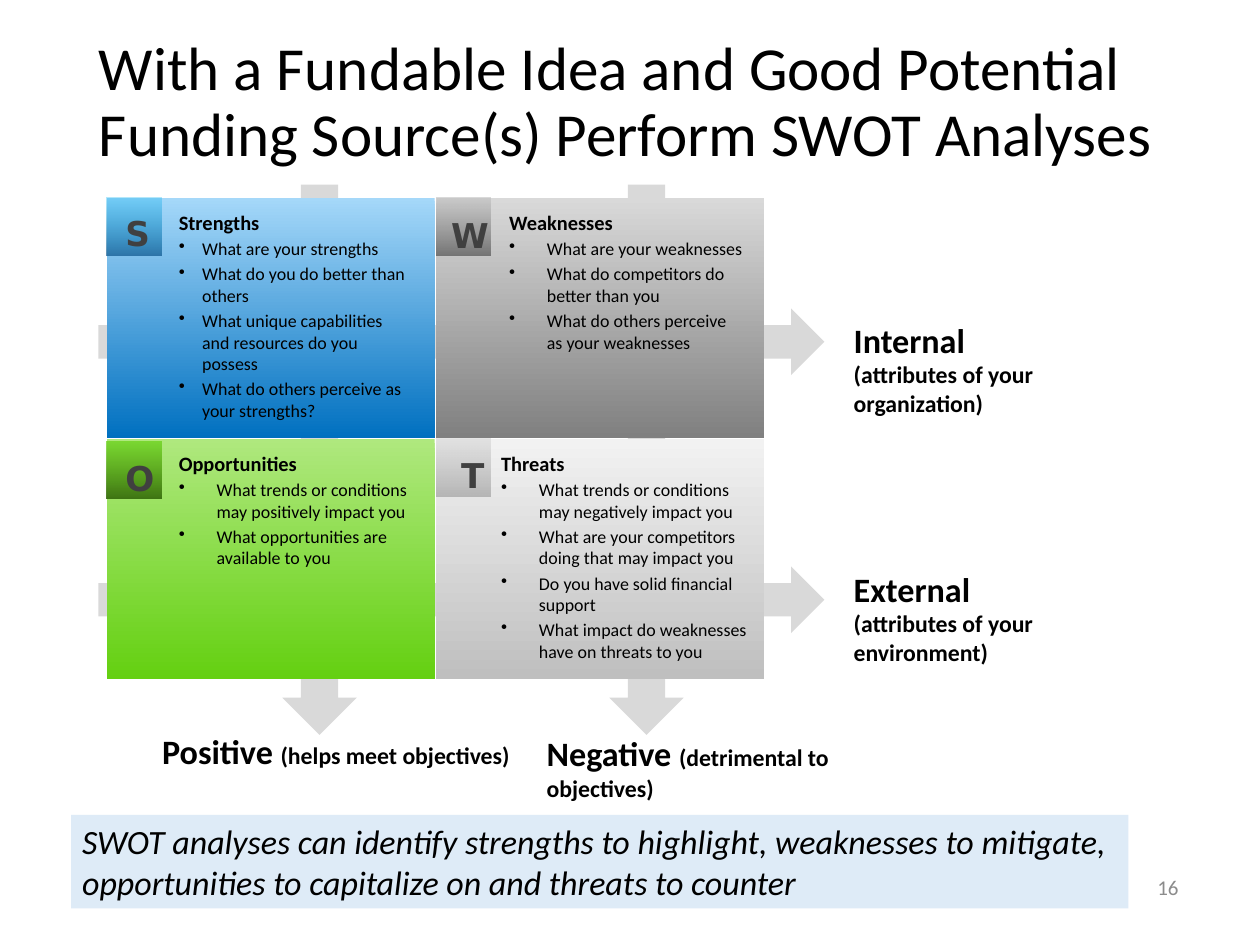
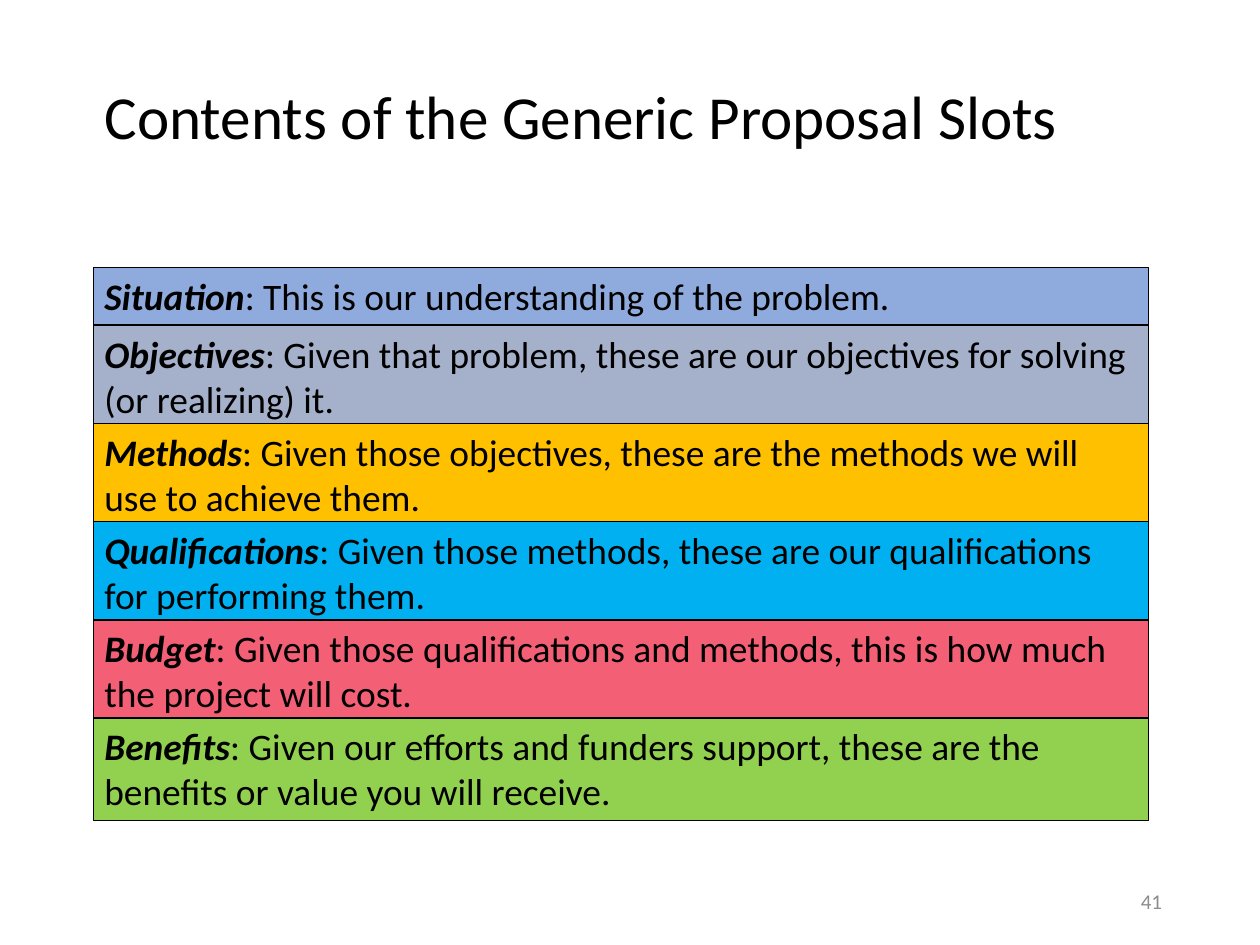
from lxml.etree import SubElement
from pptx import Presentation
from pptx.dml.color import RGBColor
from pptx.enum.shapes import MSO_SHAPE
from pptx.enum.text import MSO_ANCHOR, MSO_AUTO_SIZE, PP_ALIGN
from pptx.oxml.ns import qn
from pptx.util import Pt

FONT, MONO = "Calibri", "DejaVu Sans"
BLACK, GREY, DARK = "000000", "8C8C8C", "404040"
ARROW, BAND = "D9D9D9", "DEEBF7"

QUAD_W, QUAD_H = 212.4, 155.5
LEFT, TOP, STEP_X, STEP_Y = 69.1, 128.2, 213.5, 156.1

# column, row, gradient, badge gradient with opacities, badge drop,
# letter, letter offset, text offset, text width, indent, heading, points
QUADS = [
    (0, 0, ("A5D8F9", "0070C0"), (("00B0F0", 30), ("004C84", 65)), 0,
     "S", (5, 5.8), 39.6, 166.3, 15.1, "Strengths",
     ["What are your strengths",
      "What do you do better than others",
      "What unique capabilities and resources do you possess",
      "What do others perceive as your strengths?"]),
    (1, 0, ("D9D9D9", "808080"), (("BFBFBF", 58), ("595959", 74)), 0,
     "W", (2.5, 7.2), 40, 166.3, 24.5, "Weaknesses",
     ["What are your weaknesses",
      "What do competitors do better than you",
      "What do others perceive as your weaknesses"]),
    (0, 1, ("AFE87E", "64D011"), (("64D011", 70), ("326609", 88)), 1.4,
     "O", (5, 8.6), 39.6, 166.3, 24.5, "Opportunities",
     ["What trends or conditions may positively impact you",
      "What opportunities are available to you"]),
    (1, 1, ("F2F2F2", "BFBFBF"), (("D9D9D9", 66), ("A6A6A6", 75)), 0,
     "T", (9, 6.5), 34.9, 177.1, 24.5, "Threats",
     ["What trends or conditions may negatively impact you",
      "What are your competitors doing that may impact you",
      "Do you have solid financial support",
      "What impact do weaknesses have on threats to you"]),
]

LABELS = [
    (97.9, 469.4, 244.1, "Positive ", "(helps meet objectives)"),
    (545.8, 203, 140.4, "Internal ", "(attributes of your organization)"),
    (545.8, 364.3, 141.8, "External ", "(attributes of your environment)"),
    (347, 470.9, 269.3, "Negative ", "(detrimental to objectives)"),
]

SLOTS = [
    ("8FAADC", "Situation", ": This is our understanding of the problem."),
    ("A5B1CB", "Objectives", ": Given that problem, these are our objectives "
     "for solving (or realizing) it."),
    ("FFC000", "Methods", ": Given those objectives, these are the methods "
     "we will use to achieve them."),
    ("00B0F0", "Qualifications", ": Given those methods, these are our "
     "qualifications for performing them."),
    ("F35F74", "Budget", ": Given those qualifications and methods, this is "
     "how much the project will cost."),
    ("92D050", "Benefits", ": Given our efforts and funders support, these "
     "are the benefits or value you will receive."),
]


def rgb(code):
    return RGBColor.from_string(code)


def box(x, y, w, h):
    return Pt(x), Pt(y), Pt(w), Pt(h)


def add_run(para, text, size, bold=False, slant=False, hue=BLACK, face=FONT):
    run = para.add_run()
    run.text = text
    font = run.font
    font.name, font.size = face, Pt(size)
    font.bold, font.italic = bold, slant
    font.color.rgb = rgb(hue)


def add_text(slide, x, y, w, h):
    """Add a wrapping text box and return its frame."""
    frame = slide.shapes.add_textbox(*box(x, y, w, h)).text_frame
    frame.word_wrap = True
    return frame


def add_form(slide, kind, x, y, w, h, fill=None, line=None):
    """Add a flat preset shape whose text starts at the top left."""
    form = slide.shapes.add_shape(kind, *box(x, y, w, h))
    form.shadow.inherit = False
    if fill:
        form.fill.solid()
        form.fill.fore_color.rgb = rgb(fill)
    if line:
        form.line.color.rgb = rgb(line)
        form.line.width = Pt(0.75)
    else:
        form.line.fill.background()
    form.text_frame.vertical_anchor = MSO_ANCHOR.TOP
    form.text_frame.paragraphs[0].alignment = PP_ALIGN.LEFT
    return form


def shade(form, stops):
    """Fill from top to bottom with two (colour, opacity percent) stops."""
    form.fill.gradient()
    form.fill.gradient_angle = 270
    for stop, (hue, _) in zip(form.fill.gradient_stops, stops):
        stop.color.rgb = rgb(hue)
    marks = form.fill._xPr.iter(qn("a:srgbClr"))
    for mark, (_, opaque) in zip(list(marks), stops):
        if opaque < 100:
            SubElement(mark, qn("a:alpha")).set("val", str(opaque * 1000))


def add_point(frame, text, indent):
    """Add a bulleted paragraph with a hanging indent."""
    para = frame.add_paragraph()
    para.space_before = Pt(2.4)
    props = para._p.get_or_add_pPr()
    props.set("marL", str(Pt(indent)))
    props.set("indent", str(-Pt(indent)))
    SubElement(props, qn("a:buChar")).set("char", "•")
    add_run(para, text, 11.6)


def add_slide(deck, title, place, number, spot):
    """Add a slide with its title and page number."""
    slide = deck.slides.add_slide(deck.slide_layouts[5])
    head = slide.shapes.title
    head.left, head.top, head.width, head.height = box(*place)
    frame = head.text_frame
    frame.auto_size = MSO_AUTO_SIZE.NONE
    frame.vertical_anchor = MSO_ANCHOR.MIDDLE
    para = frame.paragraphs[0]
    para.alignment = PP_ALIGN.LEFT
    para.line_spacing = 0.9
    add_run(para, title, 39.6)
    frame = add_text(slide, *spot)
    frame.vertical_anchor = MSO_ANCHOR.MIDDLE
    para = frame.paragraphs[0]
    para.alignment = PP_ALIGN.RIGHT
    add_run(para, number, 13.6, hue=GREY)
    return slide


def add_quad(slide, col, row, hues, stops, drop, sign, shift,
             inset, width, indent, head, points):
    x, y = LEFT + col * STEP_X, TOP + row * STEP_Y
    form = add_form(slide, MSO_SHAPE.RECTANGLE, x, y, QUAD_W, QUAD_H)
    shade(form, [(hue, 100) for hue in hues])
    frame = add_text(slide, x + inset, y + 4, width, 148)
    add_run(frame.paragraphs[0], head, 13.2, bold=True)
    for point in points:
        add_point(frame, point, indent)
    badge = add_form(slide, MSO_SHAPE.RECTANGLE, x, y + drop, 35.3, 37.4)
    shade(badge, stops)
    frame = add_text(slide, x + shift[0], y + shift[1], 28, 33.8)
    frame.word_wrap = False
    add_run(frame.paragraphs[0], sign, 22.1, bold=True, hue=DARK, face=MONO)


def add_swot(deck):
    slide = add_slide(
        deck, "With a Fundable Idea and Good Potential Funding Source(s) "
        "Perform SWOT Analyses", (56.9, 24.5, 712.8, 85.7),
        "16", (585.4, 558.7, 185, 31.7))
    for y in (366.8, 199.8):
        add_form(slide, MSO_SHAPE.RIGHT_ARROW, 63.7, y, 470.2, 43.2, ARROW)
    for x in (394.6, 182.9):
        add_form(slide, MSO_SHAPE.DOWN_ARROW, x, 119.5, 48.2, 356.4, ARROW)
    for quad in QUADS:
        add_quad(slide, *quad)
    for x, y, w, name, note in LABELS:
        para = add_text(slide, x, y, w, 34).paragraphs[0]
        add_run(para, name, 22.1, bold=True)
        add_run(para, note, 15.4, bold=True)
    band = add_form(slide, MSO_SHAPE.RECTANGLE, 46.1, 527.8, 684.7, 60.5, BAND)
    add_run(band.text_frame.paragraphs[0],
            "SWOT analyses can identify strengths to highlight, weaknesses to "
            "mitigate, opportunities to capitalize on and threats to counter",
            22, slant=True)


def add_slots(deck):
    slide = add_slide(
        deck, "Contents of the Generic Proposal Slots",
        (60.5, 20.2, 683.3, 114.5), "41", (576, 567.4, 183.6, 32.4))
    for i, (fill, name, text) in enumerate(SLOTS):
        y, h = (211 + 63.5 * (i - 1), 66.2) if i else (173.5, 37)
        slot = add_form(slide, MSO_SHAPE.RECTANGLE, 60.5, y, 683.3, h,
                        fill, BLACK)
        para = slot.text_frame.paragraphs[0]
        add_run(para, name, 24.2, bold=True, slant=True)
        add_run(para, text, 24.2)


def main():
    deck = Presentation()
    deck.slide_width, deck.slide_height = Pt(816), Pt(612)
    add_swot(deck)
    add_slots(deck)
    deck.save("out.pptx")


if __name__ == "__main__":
    main()
